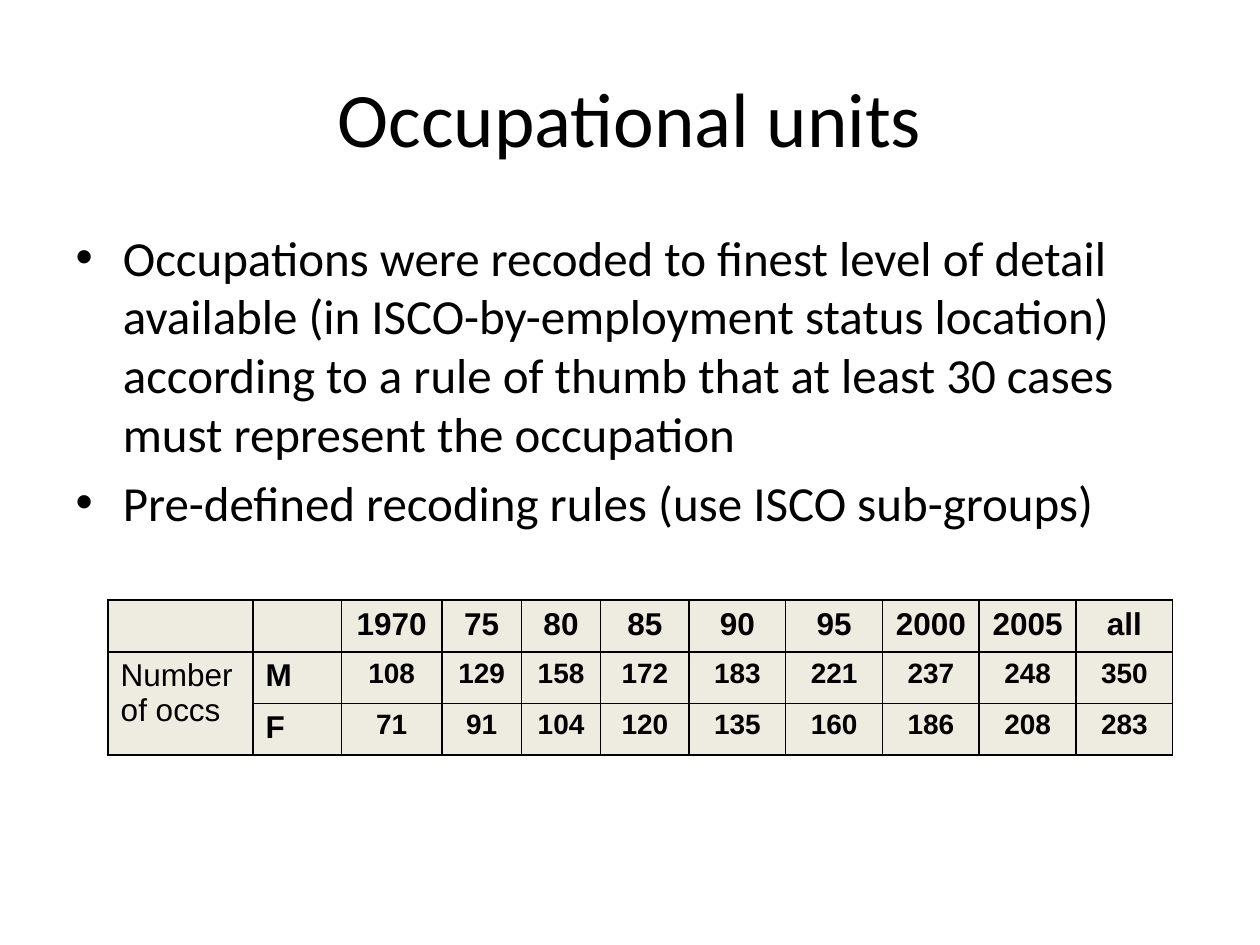
"""Build a slide on occupational units with a table of counts by year and sex."""
from lxml import etree
from pptx import Presentation
from pptx.dml.color import RGBColor
from pptx.enum.text import MSO_ANCHOR, MSO_AUTO_SIZE, PP_ALIGN
from pptx.oxml.ns import qn
from pptx.util import Cm, Pt

CENTER, LEFT = PP_ALIGN.CENTER, PP_ALIGN.LEFT
MIDDLE, TOP = MSO_ANCHOR.MIDDLE, MSO_ANCHOR.TOP
FIXED = MSO_AUTO_SIZE.NONE

COLORS = {"text": "000000", "cell": "EEECE1", "line": "000000"}
POINTS = [
    "Occupations were recoded to finest level of detail available "
    "(in ISCO-by-employment status location) according to a rule of thumb "
    "that at least 30 cases must represent the occupation",
    "Pre-defined recoding rules (use ISCO sub-groups)",
]
WIDTHS = [2.92, 1.78, 2.03, 1.6, 1.6, 1.78] + [1.95] * 5
ROWS = [
    ["", "", "1970", "75", "80", "85", "90", "95", "2000", "2005", "all"],
    ["Number of occs", "M", "108", "129", "158", "172", "183", "221", "237", "248", "350"],
    ["", "F", "71", "91", "104", "120", "135", "160", "186", "208", "283"],
]


class Deck:
    """Hold the style and the current slide."""

    def __init__(self):
        self.prs = Presentation()
        self.prs.slide_width, self.prs.slide_height = Cm(25.4), Cm(19.05)
        self.slide = self.prs.slides.add_slide(self.prs.slide_layouts[1])

    def color(self, name):
        return RGBColor.from_string(COLORS[name])

    def run(self, para, text, size, font, bold=False):
        run = para.add_run()
        run.text = text
        run.font.size, run.font.name, run.font.bold = Pt(size), font, bold
        run.font.color.rgb = self.color("text")

    def place(self, shape, box, anchor):
        shape.left, shape.top, shape.width, shape.height = map(Cm, box)
        frame = shape.text_frame
        frame.auto_size, frame.vertical_anchor = FIXED, anchor
        return frame

    def title(self, text, box):
        frame = self.place(self.slide.shapes.title, box, MIDDLE)
        para = frame.paragraphs[0]
        para.alignment = CENTER
        self.run(para, text, 44, "Calibri")

    def bullets(self, items, box):
        frame = self.place(self.slide.placeholders[1], box, TOP)
        for i, item in enumerate(items):
            para = frame.add_paragraph() if i else frame.paragraphs[0]
            self.run(para, item, 28, "Calibri")

    def border(self, cell):
        props = cell._tc.get_or_add_tcPr()
        for i, side in enumerate(("a:lnL", "a:lnR", "a:lnT", "a:lnB")):
            line = etree.Element(qn(side), w=str(Pt(1)))
            fill = etree.SubElement(line, qn("a:solidFill"))
            etree.SubElement(fill, qn("a:srgbClr"), val=COLORS["line"])
            props.insert(i, line)

    def cell(self, cell, text, size, bold, align):
        cell.fill.solid()
        cell.fill.fore_color.rgb = self.color("cell")
        self.border(cell)
        if text:
            para = cell.text_frame.paragraphs[0]
            para.alignment = align
            self.run(para, text, size, "Arial", bold)

    def table(self, rows, widths, left, top, step):
        table = self.slide.shapes.add_table(
            len(rows), len(widths), Cm(left), Cm(top),
            Cm(sum(widths)), Cm(step * len(rows))).table
        for col, width in zip(table.columns, widths):
            col.width = Cm(width)
        for r, row in enumerate(rows):
            table.rows[r].height = Cm(step)
            for c, text in enumerate(row):
                size = 16 if r and c > 1 else 18
                align = CENTER if c > 1 else LEFT
                self.cell(table.cell(r, c), text, size, c > 0, align)
        table.cell(1, 0).merge(table.cell(2, 0))


def main():
    deck = Deck()
    deck.title("Occupational units", (1.27, 0.76, 22.86, 3.18))
    deck.bullets(POINTS, (1.27, 4.45, 22.86, 12.57))
    deck.table(ROWS, WIDTHS, 2.18, 12.1, 1.04)
    deck.prs.save("out.pptx")


if __name__ == "__main__":
    main()
